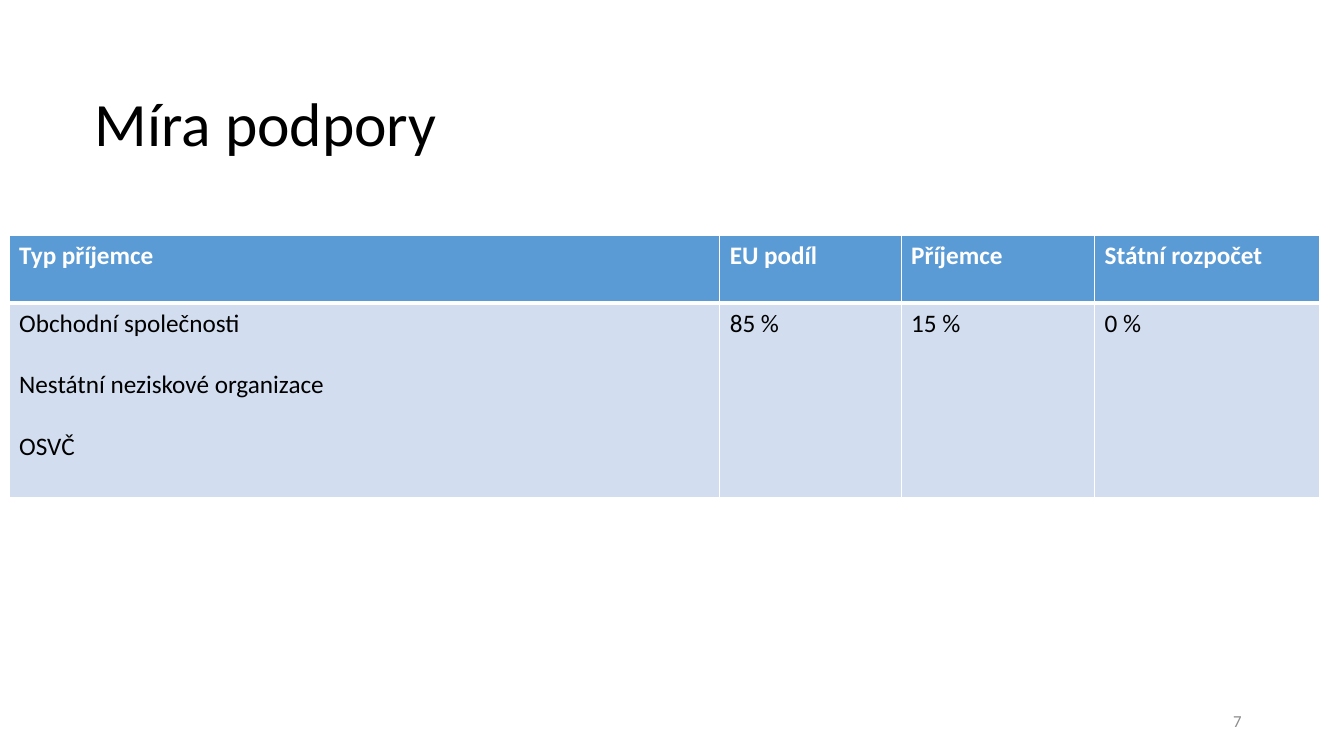
import pptx
import pptx.dml.color
import pptx.enum.text
import pptx.oxml
import pptx.oxml.ns
import pptx.util

Pt = pptx.util.Pt
ALIGN = pptx.enum.text.PP_ALIGN
MIDDLE = pptx.enum.text.MSO_ANCHOR.MIDDLE
FONT = "Calibri"
WHITE = "FFFFFF"
BLACK = "000000"
GRAY = "8C8C8C"
HEADER_BLUE = "5B9BD5"
BODY_BLUE = "D2DEEF"


def rgb(value):
    return pptx.dml.color.RGBColor.from_string(value)


def write(tf, text, size=18, color=BLACK, bold=False, align=ALIGN.LEFT,
          line=1.0, gap=0):
    """Fill a text frame, one paragraph per line, with gap points between."""
    tf.word_wrap = True
    for i, words in enumerate(text.split("\n")):
        p = tf.add_paragraph() if i else tf.paragraphs[0]
        p.alignment = align
        p.line_spacing = line
        p.space_before = Pt(gap if i else 0)
        r = p.add_run()
        r.text = words
        r.font.name = FONT
        r.font.size = Pt(size)
        r.font.bold = bold
        r.font.color.rgb = rgb(color)


prs = pptx.Presentation()
prs.slide_width = Pt(960)
prs.slide_height = Pt(540)
s = prs.slides.add_slide(prs.slide_layouts[6])

# Title and slide number
for text, box, style in [
    ("Míra podpory", (60.5, 56, 828, 69), dict(size=44, line=0.9)),
    ("7", (678, 500.5, 216, 28.8), dict(size=12, color=GRAY, align=ALIGN.RIGHT)),
]:
    tf = s.shapes.add_textbox(*map(Pt, box)).text_frame
    tf.vertical_anchor = MIDDLE
    write(tf, text, **style)

# Support rates
rows = [
    ["Typ příjemce", "EU podíl", "Příjemce", "Státní rozpočet"],
    ["Obchodní společnosti\nNestátní neziskové organizace\nOSVČ",
     "85 %", "15 %", "0 %"],
]
widths = [507.6, 129.6, 138.2, 160.6]
heights = [48.2, 138.5]
# Fill, text colour, bold, and border widths per row
styles = [
    (HEADER_BLUE, WHITE, True, {"L": 1, "R": 1, "T": 1, "B": 3}),
    (BODY_BLUE, BLACK, False, {"L": 1, "R": 1, "T": 3, "B": 1}),
]

table = s.shapes.add_table(len(rows), len(widths), Pt(6.5), Pt(168.5),
                           Pt(sum(widths)), Pt(sum(heights))).table
for column, width in zip(table.columns, widths):
    column.width = Pt(width)
for row, height, texts, (fill, color, bold, borders) in zip(
        table.rows, heights, rows, styles):
    row.height = Pt(height)
    for cell, text in zip(row.cells, texts):
        write(cell.text_frame, text, color=color, bold=bold, gap=22)
        cell.fill.solid()
        cell.fill.fore_color.rgb = rgb(fill)
        tcPr = cell._tc.get_or_add_tcPr()
        for i, (side, width) in enumerate(borders.items()):
            tcPr.insert(i, pptx.oxml.parse_xml(
                f'<a:ln{side} {pptx.oxml.ns.nsdecls("a")} w="{Pt(width)}">'
                f'<a:solidFill><a:srgbClr val="{WHITE}"/></a:solidFill>'
                f'</a:ln{side}>'))

prs.save("out.pptx")
